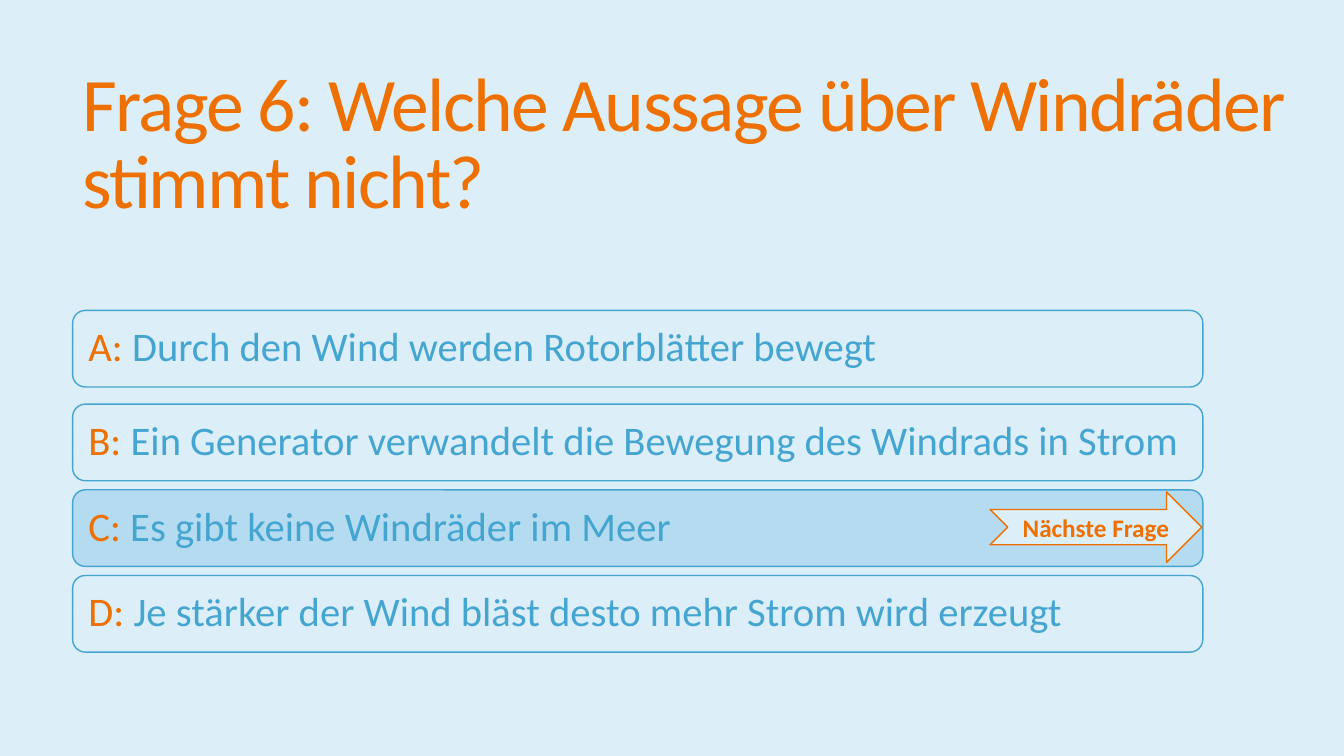
import pptx
import pptx.dml.color
import pptx.enum.shapes
import pptx.enum.text
import pptx.util

RGBColor = pptx.dml.color.RGBColor
Inches = pptx.util.Inches
Pt = pptx.util.Pt
Shape = pptx.enum.shapes.MSO_SHAPE
Align = pptx.enum.text.PP_ALIGN

PALE = RGBColor(0xDC, 0xEE, 0xF8)
SKY = RGBColor(0xB5, 0xDB, 0xF0)
BLUE = RGBColor(0x44, 0xA5, 0xD0)
ORANGE = RGBColor(0xED, 0x70, 0x00)

TITLE = "Frage 6: Welche Aussage über Windräder stimmt nicht?"
# Letter, answer, top edge, fill
ANSWERS = [
    ("A: ", "Durch den Wind werden Rotorblätter bewegt", 3.08, PALE),
    ("B: ", "Ein Generator verwandelt die Bewegung des Windrads in Strom",
     4.01, PALE),
    ("C: ", "Es gibt keine Windräder im Meer", 4.86, SKY),
    ("D: ", "Je stärker der Wind bläst desto mehr Strom wird erzeugt",
     5.71, PALE),
]


def add_run(para, text, size, color, bold=False):
    run = para.add_run()
    run.text = text
    run.font.name = "Calibri"
    run.font.size = Pt(size)
    run.font.color.rgb = color
    run.font.bold = bold
    return run


def set_frame(frame, align, space=1.0):
    frame.word_wrap = True
    frame.vertical_anchor = pptx.enum.text.MSO_ANCHOR.MIDDLE
    para = frame.paragraphs[0]
    para.alignment = align
    para.line_spacing = space
    return para


def add_panel(slide, kind, box, fill, line):
    panel = slide.shapes.add_shape(kind, *map(Inches, box))
    panel.shadow.inherit = False
    panel.fill.solid()
    panel.fill.fore_color.rgb = fill
    panel.line.color.rgb = line
    panel.line.width = Pt(1)
    return panel


def add_title(slide, box):
    frame = slide.shapes.add_textbox(*map(Inches, box)).text_frame
    para = set_frame(frame, Align.LEFT, 0.85)
    run = add_run(para, TITLE, 54, ORANGE)
    # Tighter letter spacing, in hundredths of a point
    run.font._element.set("spc", "-120")


def add_answer(slide, box, letter, answer, fill):
    panel = add_panel(slide, Shape.ROUNDED_RECTANGLE, box, fill, BLUE)
    frame = panel.text_frame
    # The rounded corners add a little inset of their own
    frame.margin_left = Inches(0.12)
    frame.margin_right = Inches(0.05)
    para = set_frame(frame, Align.LEFT, 0.9)
    add_run(para, letter, 29, ORANGE)
    add_run(para, answer, 29, BLUE)


def add_next(slide, box):
    arrow = add_panel(slide, Shape.NOTCHED_RIGHT_ARROW, box, PALE, ORANGE)
    para = set_frame(arrow.text_frame, Align.CENTER)
    arrow.text_frame.word_wrap = False
    add_run(para, "Nächste Frage", 18, ORANGE, True)


def main():
    deck = pptx.Presentation()
    deck.slide_width = Inches(13.33)
    deck.slide_height = Inches(7.5)
    slide = deck.slides.add_slide(deck.slide_layouts[6])
    slide.background.fill.solid()
    slide.background.fill.fore_color.rgb = PALE

    # Question
    add_title(slide, (0.72, 0.55, 12.45, 1.81))

    # Answers
    for letter, answer, top, fill in ANSWERS:
        add_answer(slide, (0.72, top, 11.21, 0.76), letter, answer, fill)

    # Arrow to the next question
    add_next(slide, (9.82, 4.88, 2.1, 0.7))

    deck.save("out.pptx")


if __name__ == "__main__":
    main()
